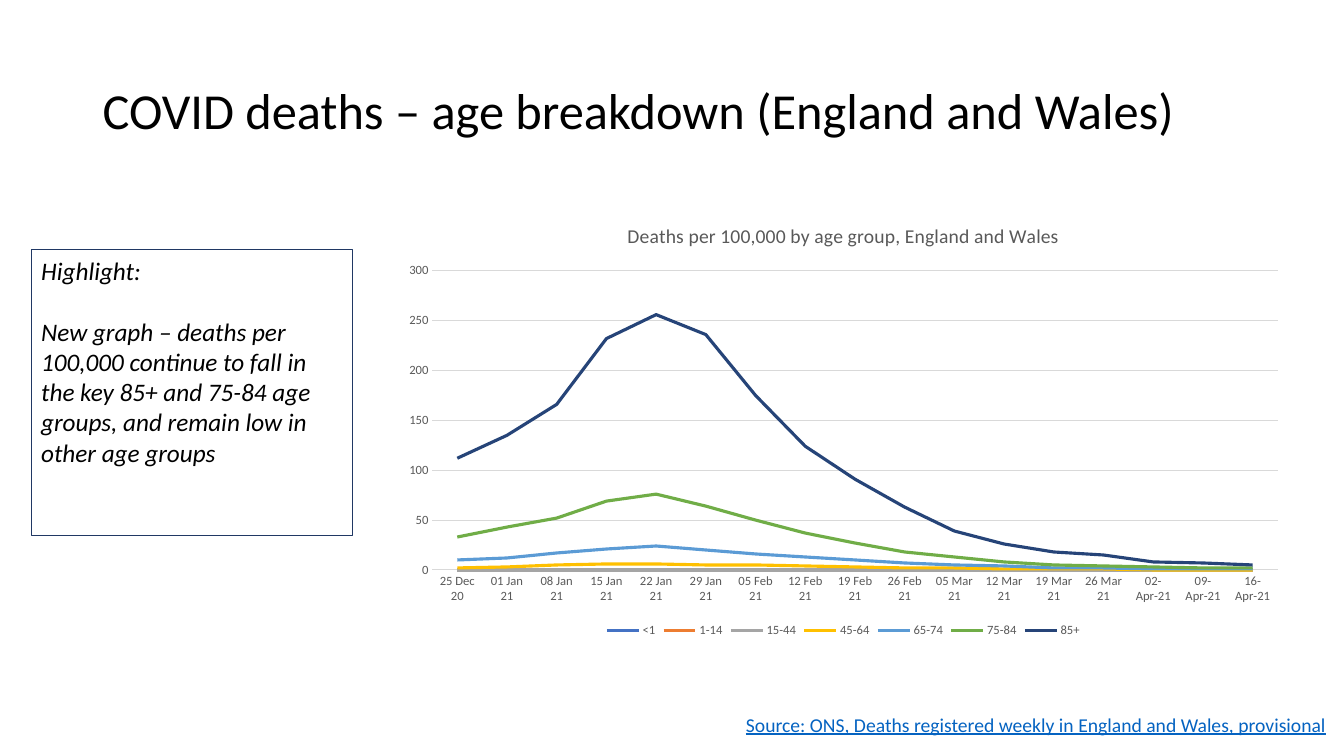
from dataclasses import dataclass
from typing import Any

from pptx import Presentation
from pptx.chart.data import CategoryChartData
from pptx.dml.color import RGBColor
from pptx.enum.chart import XL_CHART_TYPE, XL_LEGEND_POSITION, XL_MARKER_STYLE, XL_TICK_MARK
from pptx.enum.shapes import MSO_SHAPE
from pptx.enum.text import MSO_ANCHOR, PP_ALIGN
from pptx.util import Inches, Pt


@dataclass(frozen=True)
class Theme:
    font: str = "Calibri"
    ink: str = "000000"
    link: str = "0563C1"
    frame: str = "203864"
    muted: str = "595959"
    grid: str = "D9D9D9"
    headline_size: float = 36
    highlight_size: float = 18
    source_size: float = 14
    chart_title_size: float = 14
    chart_size: float = 10
    label_size: float = 9
    thin: float = 0.75
    thick: float = 2.25


@dataclass(frozen=True)
class AgeGroup:
    name: str
    color: str
    deaths: list[int]


THEME = Theme()

WEEKS = [
    "25 Dec 20", "01 Jan 21", "08 Jan 21", "15 Jan 21", "22 Jan 21", "29 Jan 21",
    "05 Feb 21", "12 Feb 21", "19 Feb 21", "26 Feb 21", "05 Mar 21", "12 Mar 21",
    "19 Mar 21", "26 Mar 21", "02-Apr-21", "09-Apr-21", "16-Apr-21",
]
NO_DEATHS = [0] * len(WEEKS)
AGE_GROUPS = [
    AgeGroup("<1", "4472C4", NO_DEATHS),
    AgeGroup("1-14", "ED7D31", NO_DEATHS),
    AgeGroup("15-44", "A5A5A5", NO_DEATHS),
    AgeGroup("45-64", "FFC000", [2, 3, 5, 6, 6, 5, 5, 4, 3, 2, 2, 1, 1, 1, 0, 0, 0]),
    AgeGroup("65-74", "5B9BD5", [10, 12, 17, 21, 24, 20, 16, 13, 10, 7, 5, 4, 2, 2, 1, 1, 1]),
    AgeGroup("75-84", "70AD47", [33, 43, 52, 69, 76, 64, 50, 37, 27, 18, 13, 8, 5, 4, 3, 2, 2]),
    AgeGroup("85+", "264478",
             [112, 135, 166, 232, 256, 236, 175, 124, 91, 63, 39, 26, 18, 15, 8, 7, 5]),
]


def box(left: float, top: float, width: float, height: float) -> tuple[int, ...]:
    return tuple(Inches(length) for length in (left, top, width, height))


def apply(target: Any, values: dict[str, Any]) -> None:
    for attribute, value in values.items():
        setattr(target, attribute, value)


def style_font(font: Any, size: float, color: str, **extra: Any) -> None:
    apply(font, {"name": THEME.font, "size": Pt(size), "bold": False, **extra})
    font.color.rgb = RGBColor.from_string(color)


def style_line(line: Any, color: str, width: float) -> None:
    line.width = Pt(width)
    line.color.rgb = RGBColor.from_string(color)


def write(shape: Any, texts: list[str], size: float, color: str, *,
          anchor: MSO_ANCHOR = MSO_ANCHOR.TOP, wrap: bool = True,
          spacing: float = 1.0, gap: float = 0, **extra: Any) -> None:
    frame = shape.text_frame
    apply(frame, {"word_wrap": wrap, "vertical_anchor": anchor})
    for index, text in enumerate(texts):
        paragraph = frame.add_paragraph() if index else frame.paragraphs[0]
        apply(paragraph, {"alignment": PP_ALIGN.LEFT, "line_spacing": spacing})
        if index:
            paragraph.space_before = Pt(gap)
        run = paragraph.add_run()
        run.text = text
        style_font(run.font, size, color, **extra)


def add_deaths_chart(slide: Any) -> None:
    data = CategoryChartData()
    data.categories = WEEKS
    for group in AGE_GROUPS:
        data.add_series(group.name, group.deaths)
    chart = slide.shapes.add_chart(XL_CHART_TYPE.LINE, *box(3.88, 2.03, 8.97, 4.34), data).chart
    style_font(chart.font, THEME.chart_size, THEME.ink)

    # Chart title and legend
    chart.has_title = True
    title = chart.chart_title
    title.include_in_layout = False
    title.text_frame.text = "Deaths per 100,000 by age group, England and Wales"
    style_font(title.text_frame.paragraphs[0].runs[0].font, THEME.chart_title_size, THEME.muted)
    chart.has_legend = True
    apply(chart.legend, {"position": XL_LEGEND_POSITION.BOTTOM, "include_in_layout": False})
    style_font(chart.legend.font, THEME.label_size, THEME.muted)

    # Axes
    weeks, rate = chart.category_axis, chart.value_axis
    for axis in (weeks, rate):
        apply(axis, {"major_tick_mark": XL_TICK_MARK.NONE, "minor_tick_mark": XL_TICK_MARK.NONE})
        style_font(axis.tick_labels.font, THEME.label_size, THEME.muted)
    style_line(weeks.format.line, THEME.grid, THEME.thin)
    rate.format.line.fill.background()
    apply(rate, {"minimum_scale": 0, "maximum_scale": 300, "major_unit": 50,
                 "has_major_gridlines": True})
    style_line(rate.major_gridlines.format.line, THEME.grid, THEME.thin)

    # One line per age group
    plot = chart.plots[0]
    plot.vary_by_categories = False
    for series, group in zip(plot.series, AGE_GROUPS):
        series.smooth = False
        series.marker.style = XL_MARKER_STYLE.NONE
        style_line(series.format.line, group.color, THEME.thick)


def main() -> None:
    deck = Presentation()
    apply(deck, {"slide_width": Inches(13.33), "slide_height": Inches(7.5)})
    slide = deck.slides.add_slide(deck.slide_layouts[6])

    # Headline
    headline = slide.shapes.add_textbox(*box(0.92, 0.4, 11.5, 1.45))
    write(headline, ["COVID deaths – age breakdown (England and Wales)"],
          THEME.headline_size, THEME.ink, anchor=MSO_ANCHOR.MIDDLE, spacing=0.9)

    # Highlight panel
    highlight = slide.shapes.add_shape(MSO_SHAPE.RECTANGLE, *box(0.31, 2.48, 3.19, 2.83))
    highlight.shadow.inherit = False
    highlight.fill.background()
    style_line(highlight.line, THEME.frame, THEME.thin)
    write(highlight, [
        "Highlight:",
        "New graph – deaths per 100,000 continue to fall in the key 85+ and 75-84 age groups, "
        "and remain low in other age groups",
    ], THEME.highlight_size, THEME.ink, gap=22, italic=True)

    # Source line
    source = slide.shapes.add_textbox(*box(7.3, 7.02, 6.02, 0.34))
    write(source, ["Source: ONS, Deaths registered weekly in England and Wales, provisional"],
          THEME.source_size, THEME.link, wrap=False, underline=True)

    add_deaths_chart(slide)
    deck.save("out.pptx")


if __name__ == "__main__":
    main()
